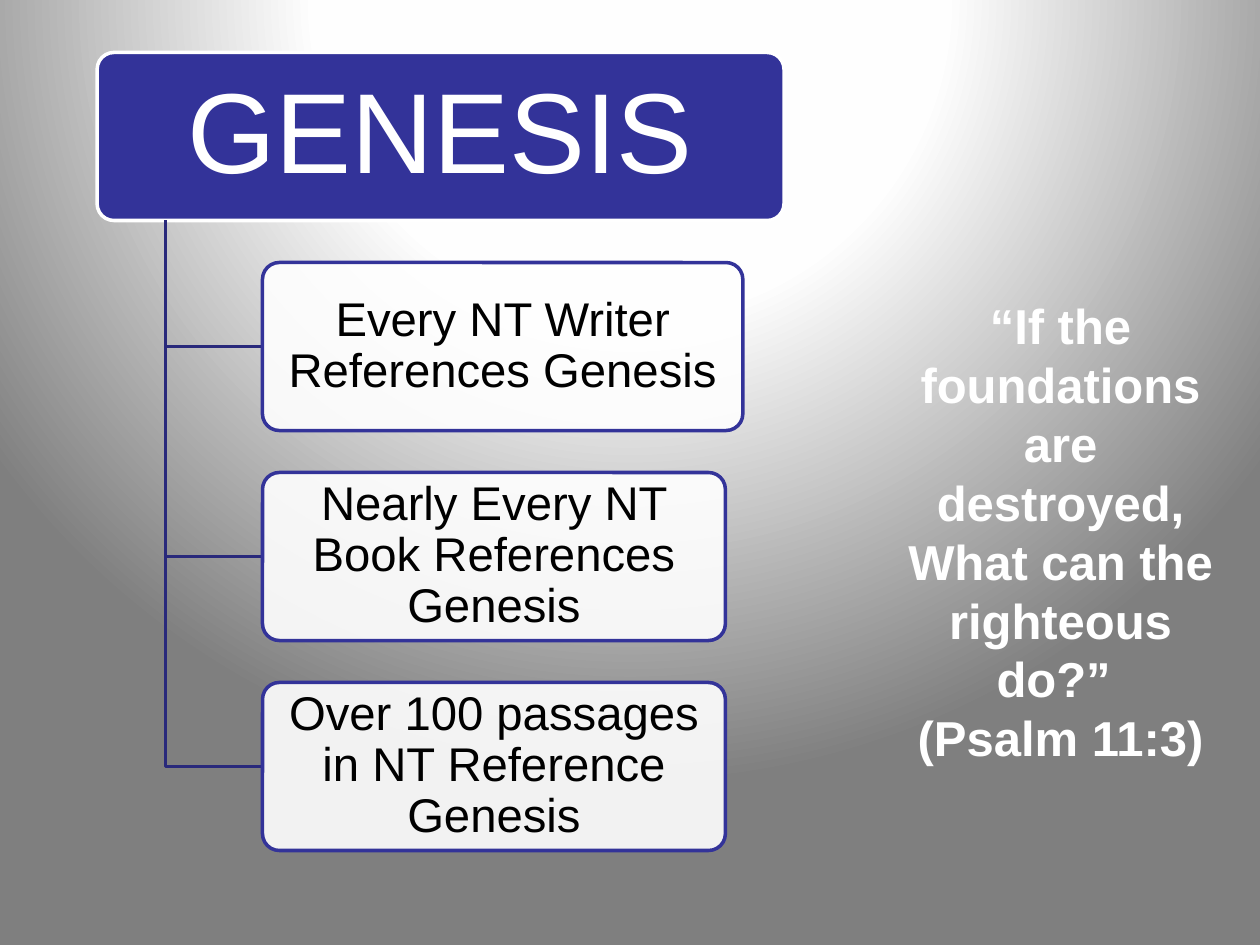
from dataclasses import dataclass

from lxml.etree import SubElement
from pptx import Presentation
from pptx.dml.color import RGBColor
from pptx.enum.shapes import MSO_SHAPE
from pptx.enum.text import MSO_ANCHOR, MSO_AUTO_SIZE, PP_ALIGN
from pptx.oxml import parse_xml
from pptx.oxml.ns import nsdecls, qn
from pptx.util import Pt

BLUE, DARK_BLUE, WHITE, BLACK = "333399", "29297B", "FFFFFF", "000000"
STOPS = ((0, WHITE), (40, "FEFEFE"), (100, "7F7F7F"))
TOP, PITCH, BOX_H = 30, 120, 96
TRUNK_X, BRANCH_X = 94.5, 150


@dataclass
class Box:
    """A rounded box of the hierarchy."""
    text: str
    left: float
    top: float
    width: float
    size: float
    fill: str = WHITE
    line: str = BLUE
    color: str = BLACK
    alpha: int = 90


def rgb(value: str) -> RGBColor:
    """Turn a hex string into a colour."""
    return RGBColor.from_string(value)


def set_background(s) -> None:
    """Fill the slide with a radial gradient centred above its top edge."""
    stops = "".join(
        f'<a:gs pos="{pos * 1000}"><a:srgbClr val="{color}"/></a:gs>'
        for pos, color in STOPS
    )
    bg = parse_xml(
        f'<p:bg {nsdecls("p", "a")}><p:bgPr><a:gradFill rotWithShape="1">'
        f'<a:gsLst>{stops}</a:gsLst><a:path path="circle">'
        '<a:fillToRect l="50000" t="-80000" r="50000" b="180000"/></a:path>'
        "</a:gradFill><a:effectLst/></p:bgPr></p:bg>"
    )
    s.element.cSld.insert(0, bg)


def format_text(p, size: float, color: str, bold: bool = False) -> None:
    """Centre a paragraph and format its runs."""
    p.alignment = PP_ALIGN.CENTER
    for r in p.runs:
        r.font.name = "Arial"
        r.font.size = Pt(size)
        r.font.bold = bold
        r.font.color.rgb = rgb(color)


def add_box(s, box: Box) -> None:
    """Draw a rounded box with its text."""
    sp = s.shapes.add_shape(
        MSO_SHAPE.ROUNDED_RECTANGLE,
        Pt(box.left), Pt(box.top), Pt(box.width), Pt(BOX_H),
    )
    sp.adjustments[0] = 0.1
    sp.shadow.inherit = False
    sp.fill.solid()
    sp.fill.fore_color.rgb = rgb(box.fill)
    if box.alpha < 100:
        clr = sp.element.spPr.find(qn("a:solidFill"))[0]
        SubElement(clr, qn("a:alpha"), val=str(box.alpha * 1000))
    sp.line.color.rgb = rgb(box.line)
    sp.line.width = Pt(2)
    tf = sp.text_frame
    tf.word_wrap = True
    tf.vertical_anchor = MSO_ANCHOR.MIDDLE
    tf.margin_left = tf.margin_right = Pt(box.size * 0.15)
    tf.margin_top = tf.margin_bottom = Pt(box.size * 0.1)
    tf.text = box.text
    p = tf.paragraphs[0]
    p.line_spacing = 0.9
    format_text(p, box.size, box.color)


def add_branch(s, y: float) -> None:
    """Draw an elbow from the heading down to a box centre."""
    builder = s.shapes.build_freeform(Pt(TRUNK_X), Pt(TOP + BOX_H))
    builder.add_line_segments(
        [(Pt(TRUNK_X), Pt(y)), (Pt(BRANCH_X), Pt(y))], close=False
    )
    sp = builder.convert_to_shape()
    sp.shadow.inherit = False
    sp.fill.background()
    sp.line.color.rgb = rgb(DARK_BLUE)
    sp.line.width = Pt(2)


def add_quote(s, lines: list[str]) -> None:
    """Write the quotation at the right."""
    tb = s.shapes.add_textbox(Pt(510), Pt(165.6), Pt(192), Pt(278.6))
    tf = tb.text_frame
    tf.word_wrap = True
    tf.auto_size = MSO_AUTO_SIZE.SHAPE_TO_FIT_TEXT
    tf.text = "\n".join(lines)
    for p in tf.paragraphs:
        format_text(p, 28, WHITE, bold=True)


def main() -> None:
    """Build the slide and save it."""
    prs = Presentation()
    prs.slide_width, prs.slide_height = Pt(720), Pt(540)
    s = prs.slides.add_slide(prs.slide_layouts[6])
    set_background(s)
    add_box(s, Box("GENESIS", 55.5, TOP, 392.5, 65, BLUE, WHITE, WHITE, 100))
    points = [
        ("Every NT Writer References Genesis", 274.5),
        ("Nearly Every NT Book References Genesis", 264.5),
        ("Over 100 passages in NT Reference Genesis", 264.5),
    ]
    for i, (text, width) in enumerate(points, start=1):
        top = TOP + i * PITCH
        add_branch(s, top + BOX_H / 2)
        add_box(s, Box(text, BRANCH_X, top, width, 27))
    add_quote(s, [
        "“If the foundations are destroyed, What can the righteous do?” ",
        "(Psalm 11:3)",
    ])
    prs.save("out.pptx")


if __name__ == "__main__":
    main()
